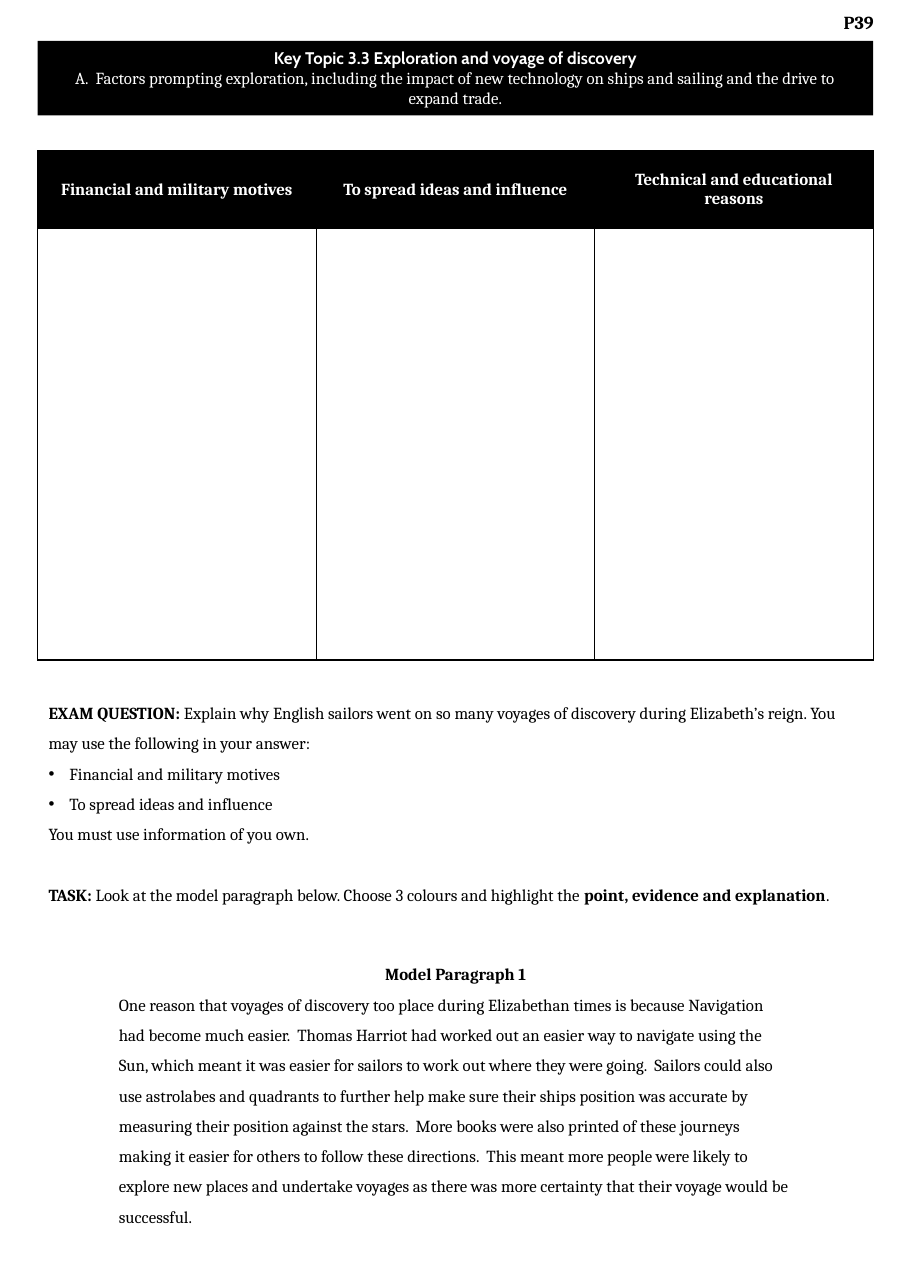
from lxml import etree
from pptx import Presentation
from pptx.dml.color import RGBColor
from pptx.enum import text
from pptx.oxml import ns
from pptx.util import Cm, Pt

BLACK = RGBColor(0, 0, 0)
WHITE = RGBColor(255, 255, 255)
SERIF = "Cambria"
SANS = "Cabin"
CENTER = text.PP_ALIGN.CENTER
LEFT = text.PP_ALIGN.LEFT

MOTIVES = [
    "Financial and military motives",
    "To spread ideas and influence",
    "Technical and educational reasons",
]
MODEL_ANSWER = (
    "One reason that voyages of discovery too place during Elizabethan times is because "
    "Navigation had become much easier.  Thomas Harriot had worked out an easier way to "
    "navigate using the Sun, which meant it was easier for sailors to work out where they "
    "were going.  Sailors could also use astrolabes and quadrants to further help make sure "
    "their ships position was accurate by measuring their position against the stars.  More "
    "books were also printed of these journeys making it easier for others to follow these "
    "directions.  This meant more people were likely to explore new places and undertake "
    "voyages as there was more certainty that their voyage would be successful."
)


def style(paragraph, color=BLACK, bold=False, size=11, face=SERIF, align=LEFT, spacing=None):
    """Set the alignment, line spacing and font of a paragraph."""
    paragraph.alignment = align
    if spacing:
        paragraph.line_spacing = spacing
    font = paragraph.font
    font.name, font.size, font.bold = face, Pt(size), bold
    font.color.rgb = color


def add_bullet(paragraph, indent):
    """Give a paragraph a round bullet with a hanging indent."""
    properties = paragraph._p.get_or_add_pPr()
    properties.set("marL", str(indent))
    properties.set("indent", str(-indent))
    etree.SubElement(properties, ns.qn("a:buFont")).set("typeface", "Arial")
    etree.SubElement(properties, ns.qn("a:buChar")).set("char", "•")


def add_borders(cell):
    """Draw a thin black line on all four sides of a cell."""
    properties = cell._tc.get_or_add_tcPr()
    for side in ("lnL", "lnR", "lnT", "lnB"):
        line = etree.SubElement(properties, ns.qn(f"a:{side}"), w=str(Pt(1)))
        fill = etree.SubElement(line, ns.qn("a:solidFill"))
        etree.SubElement(fill, ns.qn("a:srgbClr")).set("val", str(BLACK))


def add_text_frame(slide, box):
    """Add a wrapping text box and return its text frame."""
    frame = slide.shapes.add_textbox(*box).text_frame
    frame.word_wrap = True
    return frame


def set_margins(frame, margin):
    """Use one inset on all sides of a text frame."""
    frame.margin_left = frame.margin_right = margin
    frame.margin_top = frame.margin_bottom = margin


def add_page_number(slide, box):
    """Place the page number in its corner."""
    frame = add_text_frame(slide, box)
    set_margins(frame, Cm(0.25))
    number = frame.paragraphs[0]
    number.text = "P39"
    style(number, bold=True, size=12, align=CENTER)


def place_topic_banner(slide, box):
    """Turn the title placeholder into the black topic banner."""
    banner = slide.shapes.title
    banner.left, banner.top, banner.width, banner.height = box
    banner.fill.solid()
    banner.fill.fore_color.rgb = BLACK
    frame = banner.text_frame
    frame.word_wrap = True
    frame.auto_size = text.MSO_AUTO_SIZE.NONE
    frame.vertical_anchor = text.MSO_ANCHOR.MIDDLE
    set_margins(frame, Cm(0.25))
    topic, factors = frame.paragraphs[0], frame.add_paragraph()
    topic.text = "Key Topic 3.3 Exploration and voyage of discovery"
    factors.text = (
        "A.  Factors prompting exploration, including the impact of new technology on "
        "ships and sailing and the drive to expand trade."
    )
    style(topic, WHITE, bold=True, face=SANS, align=CENTER)
    style(factors, WHITE, align=CENTER)


def add_motives_table(slide, box, header_height):
    """Add the motives grid with a black header and an empty row to fill in."""
    table = slide.shapes.add_table(2, len(MOTIVES), *box).table
    table.rows[0].height = header_height
    table.rows[1].height = box[3] - header_height
    for cell in table.iter_cells():
        add_borders(cell)
        cell.fill.solid()
        cell.fill.fore_color.rgb = WHITE
    for header, motive in zip(table.rows[0].cells, MOTIVES):
        header.fill.fore_color.rgb = BLACK
        header.vertical_anchor = text.MSO_ANCHOR.MIDDLE
        header.text = motive
        style(header.text_frame.paragraphs[0], WHITE, bold=True, align=CENTER)


def add_exam_question(slide, box):
    """Add the exam question, its prompts and the task."""
    frame = add_text_frame(slide, box)
    question = frame.paragraphs[0]
    prompts = [frame.add_paragraph() for _ in range(2)]
    reminder, task = frame.add_paragraph(), frame.add_paragraph()
    wording = [
        (question, "EXAM QUESTION: ", True),
        (question, "Explain why English sailors went on so many voyages of discovery during "
                   "Elizabeth’s reign. You may use the following in your answer:", False),
        (reminder, "You must use information of you own.", False),
        (task, "TASK: ", True),
        (task, "Look at the model paragraph below. Choose 3 colours and highlight the ", False),
        (task, "point, evidence and explanation", True),
        (task, ".", False),
    ]
    for paragraph, words, bold in wording:
        run = paragraph.add_run()
        run.text = words
        run.font.bold = bold
    for prompt, motive in zip(prompts, MOTIVES):
        prompt.text = motive
        add_bullet(prompt, Cm(0.48))
    task.space_before = Pt(19.8)
    for paragraph in frame.paragraphs:
        style(paragraph, spacing=1.5)


def add_model_paragraph(slide, box):
    """Add the model answer under its centred heading."""
    frame = add_text_frame(slide, box)
    heading, answer = frame.paragraphs[0], frame.add_paragraph()
    heading.text = "Model Paragraph 1"
    answer.text = MODEL_ANSWER
    style(heading, bold=True, align=CENTER, spacing=1.5)
    style(answer, spacing=1.5)


def main():
    """Build the worksheet page."""
    deck = Presentation()
    deck.slide_width, deck.slide_height = Cm(21), Cm(29.7)
    page = deck.slides.add_slide(deck.slide_layouts[5])
    left, width = Cm(0.87), Cm(19.26)
    add_page_number(page, (Cm(19.02), Cm(0), Cm(1.55), Cm(2.26)))
    place_topic_banner(page, (left, Cm(0.94), width, Cm(1.72)))
    add_motives_table(page, (left, Cm(3.48), width, Cm(11.74)), Cm(1.78))
    add_exam_question(page, (left, Cm(15.85), width, Cm(5.36)))
    add_model_paragraph(page, (Cm(2.49), Cm(21.87), Cm(16.03), Cm(6.53)))
    deck.save("out.pptx")


if __name__ == "__main__":
    main()
